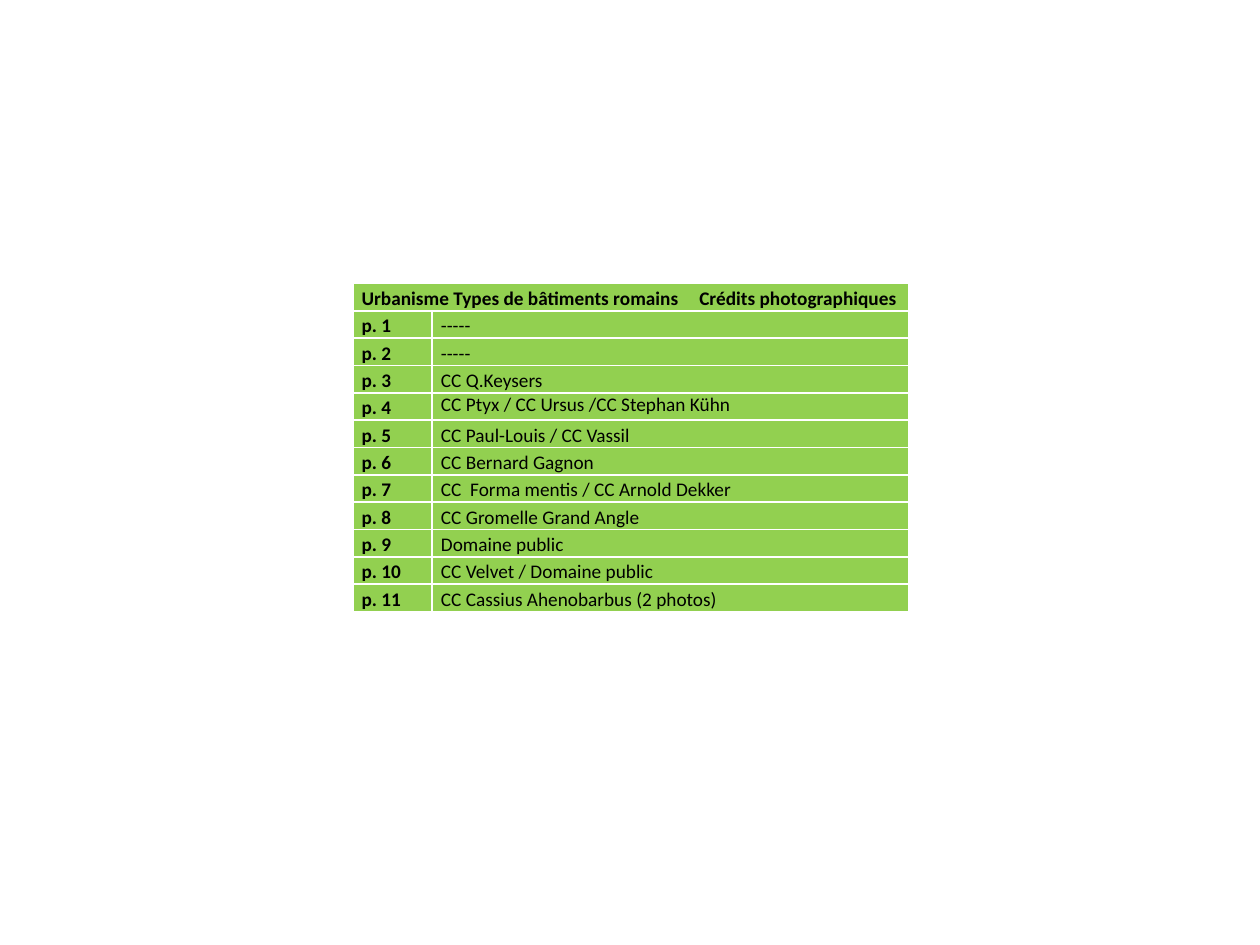
"""Build the photo credits slide."""
import dataclasses

import lxml.etree
import pptx
import pptx.dml.color
import pptx.oxml.ns
import pptx.util

Inches = pptx.util.Inches


@dataclasses.dataclass(frozen=True)
class Theme:
    """Hold the colours and type of the slide."""
    font: str = "Calibri"
    size: int = 11
    spacing: float = 1.15
    text: str = "000000"
    fill: str = "92D050"


THEME = Theme()
TITLE = "Urbanisme Types de bâtiments romains\tCrédits photographiques"
CREDITS = [
    "-----",
    "-----",
    "CC Q.Keysers",
    "CC Ptyx / CC Ursus /CC Stephan Kühn",
    "CC Paul-Louis / CC Vassil",
    "CC Bernard Gagnon",
    "CC  Forma mentis / CC Arnold Dekker",
    "CC Gromelle Grand Angle",
    "Domaine public",
    "CC Velvet / Domaine public",
    "CC Cassius Ahenobarbus (2 photos)",
]
SINGLE_SPACED_PAGE = 4
COLUMN_WIDTHS = (0.63, 3.78)
ROW_HEIGHT = 0.21


def apply_format(obj, values):
    """Set each attribute of an object from a dict of values."""
    for name, value in values.items():
        setattr(obj, name, value)


def fill_cell(cell, text, bold=False, spacing=THEME.spacing):
    """Write and format one cell, and return its paragraph."""
    apply_format(cell, {"margin_left": Inches(0.07), "margin_right": Inches(0.07),
                        "margin_top": 0, "margin_bottom": 0})
    cell.fill.solid()
    cell.fill.fore_color.rgb = pptx.dml.color.RGBColor.from_string(THEME.fill)
    p = cell.text_frame.paragraphs[0]
    p.line_spacing = spacing
    r = p.add_run()
    r.text = text
    apply_format(r.font, {"name": THEME.font, "size": pptx.util.Pt(THEME.size), "bold": bold})
    r.font.color.rgb = pptx.dml.color.RGBColor.from_string(THEME.text)
    return p


def add_tab_stop(p, position):
    """Add a left tab stop to a paragraph."""
    qn = pptx.oxml.ns.qn
    tabs = lxml.etree.SubElement(p._p.get_or_add_pPr(), qn("a:tabLst"))
    lxml.etree.SubElement(tabs, qn("a:tab"), pos=str(position), algn="l")


def add_credits_table(s):
    """Add the table of pages and their photo credits."""
    rows = len(CREDITS) + 1
    table = s.shapes.add_table(rows, len(COLUMN_WIDTHS), Inches(2.8), Inches(2.25),
                               Inches(sum(COLUMN_WIDTHS)), Inches(rows * ROW_HEIGHT)).table
    table.horz_banding = False
    for column, width in zip(table.columns, COLUMN_WIDTHS):
        column.width = Inches(width)
    for cell in table.rows[0].cells:
        apply_format(cell, {"margin_top": 0, "margin_bottom": 0})
    table.cell(0, 0).merge(table.cell(0, 1))
    add_tab_stop(fill_cell(table.cell(0, 0), TITLE, bold=True), Inches(2.68))
    for page, credit in enumerate(CREDITS, 1):
        spacing = 1.0 if page == SINGLE_SPACED_PAGE else THEME.spacing
        fill_cell(table.cell(page, 0), f"p. {page}", bold=True)
        fill_cell(table.cell(page, 1), credit, spacing=spacing)


def main():
    """Build and save the slide."""
    prs = pptx.Presentation()
    apply_format(prs, {"slide_width": Inches(10), "slide_height": Inches(7.5)})
    s = prs.slides.add_slide(prs.slide_layouts[6])
    add_credits_table(s)
    prs.save("out.pptx")


if __name__ == "__main__":
    main()
